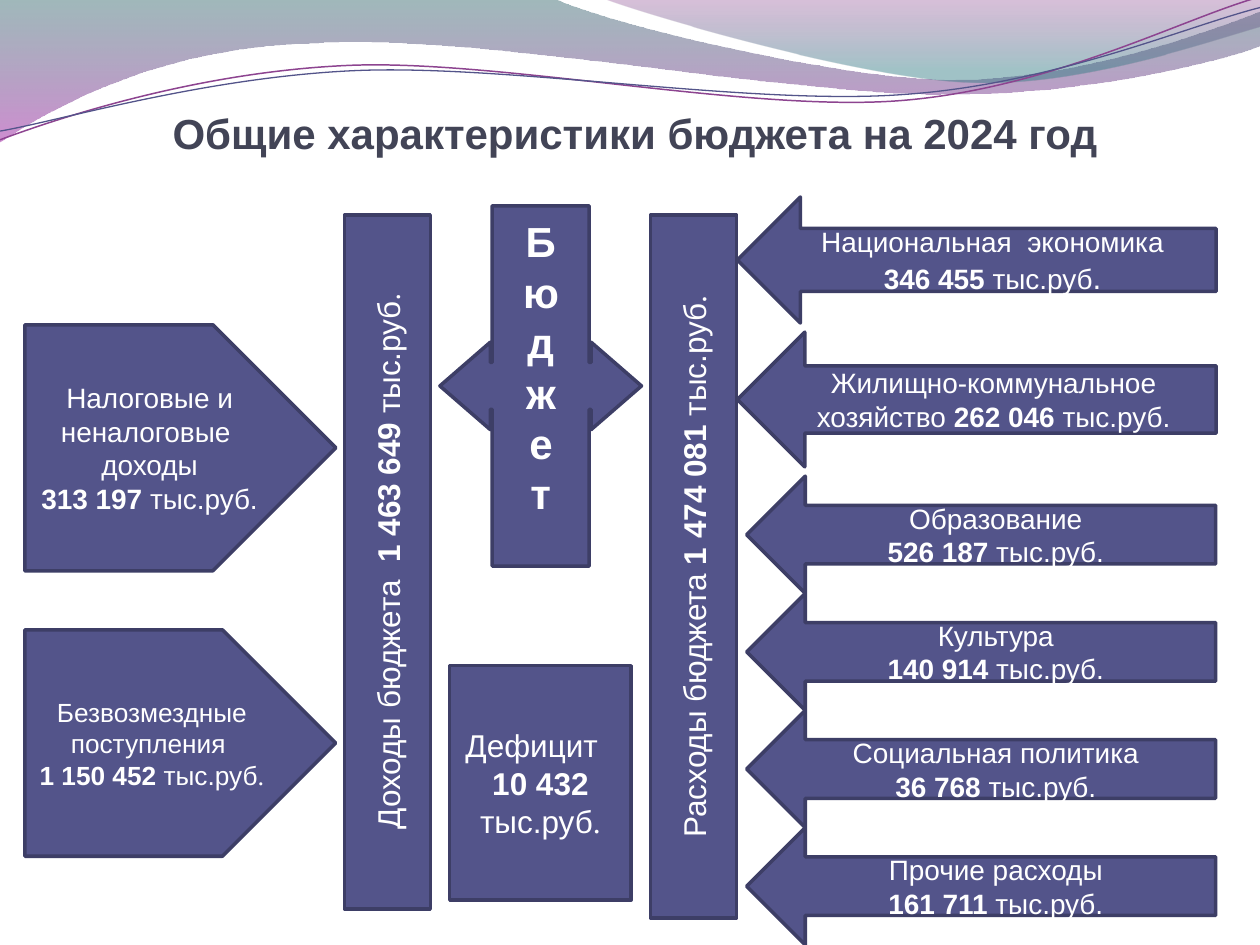
from pptx import Presentation
from pptx.dml.color import RGBColor
from pptx.enum.shapes import MSO_SHAPE
from pptx.enum.text import MSO_ANCHOR, MSO_AUTO_SIZE, PP_ALIGN
from pptx.oxml.ns import qn
from pptx.util import Pt
from lxml.etree import SubElement

INDIGO = RGBColor(0x53, 0x54, 0x8A)
DARK_INDIGO = RGBColor(0x3D, 0x3E, 0x66)
SLATE = RGBColor(0x42, 0x44, 0x56)
WHITE = RGBColor(0xFF, 0xFF, 0xFF)
TEAL = RGBColor(0x2D, 0x63, 0x68)
LIGHT_TEAL = RGBColor(0x2F, 0x7B, 0x82)
PURPLE = RGBColor(0xA5, 0x30, 0xA9)
DARK_PURPLE = RGBColor(0x7F, 0x2F, 0x82)
PLUM = RGBColor(0x8D, 0x44, 0x90)

TIMES = {"font": "Times New Roman"}
CAMBRIA = {"font": "Cambria"}
BOLD = {"bold": True}

TITLE = "Общие характеристики бюджета на 2024 год"

# Each wave: start point, then line ends (one point) or Bezier pieces (three points)
BANDS = [
    ([(0, 0), [(316.8, -0.7)],
      [(342.7, 12.2), (478.1, 45.4), (545.8, 45.4)],
      [(614.2, 45.4), (689.8, 18.7), (720, 6.5)],
      [(720.7, 25.9)],
      [(707.8, 31.7), (626.4, 54.7), (537.1, 54)],
      [(447.8, 54), (275, 20.2), (185, 24.5)],
      [(92.9, 25.9), (33.1, 59.8), (-0.7, 81.4)],
      [(0, 0)]],
     [(0, TEAL, 45), (1, PURPLE, 55)]),
    ([(344.9, -0.7),
      [(366.5, 7.9), (491, 44.6), (553.7, 46.8)],
      [(616.3, 49.7), (691.9, 23), (720, 15.1)],
      [(720, 0)], [(344.9, -0.7)]],
     [(0, DARK_PURPLE, 30), (0.8, LIGHT_TEAL, 45)]),
]
STRANDS = [
    ([(0, 79.9),
      [(34.6, 67), (113.8, 41), (199.4, 37.4)],
      [(284.4, 33.8), (427, 64.1), (513.4, 57.6)],
      [(599.8, 51.1), (675.4, 10.8), (718.6, -1.4)]], PLUM, 0.85),
    ([(0, 74.9),
      [(33.8, 69.1), (118.1, 43.9), (203.8, 40.3)],
      [(290.2, 36.7), (429.8, 60.5), (516.2, 54)],
      [(601.9, 48.2), (677.5, 15.1), (720, 4.3)]], INDIGO, 0.75),
]


def amount(number, dot=None):
    """Runs for a bold number and its unit; dot restyles the final full stop."""
    unit = [("тыс.руб", {}), (".", dot)] if dot else [("тыс.руб.", {})]
    return [(number + " ", BOLD)] + unit


# preset, (left, top, width, height), text size, text direction, paragraphs of runs
BLOCKS = [
    (MSO_SHAPE.LEFT_RIGHT_ARROW_CALLOUT, (251.4, 117.6, 115.2, 205.9), 24, "wordArtVert",
     [[("Бюджет", BOLD), (" ", {"font": "Times New Roman", "size": 18})]]),
    (MSO_SHAPE.RECTANGLE, (196.9, 122.8, 49, 396.7), 18, "vert270",
     [[("Доходы бюджета ", {}), (" 1 463 649 ", BOLD), ("тыс.руб", {}), (".", CAMBRIA)]]),
    (MSO_SHAPE.RECTANGLE, (371.8, 122.8, 49, 401.8), 18, "vert270",
     [[("Расходы бюджета ", {})] + amount("1 474 081", TIMES)]),
    (MSO_SHAPE.PENTAGON, (14.2, 185.6, 177.8, 140.6), 16, "horz",
     [[("Налоговые и неналоговые  доходы", {})], amount("313 197")]),
    (MSO_SHAPE.PENTAGON, (14.2, 359.9, 177.6, 129.4), 15, "horz",
     [[("Безвозмездные поступления ", {})], amount("1 150 452", TIMES)]),
    (MSO_SHAPE.LEFT_ARROW, (421.4, 112.6, 273.6, 72), 16, "horz",
     [[("Национальная  экономика", {})], amount("346 455", {"size": 18})]),
    (MSO_SHAPE.LEFT_ARROW, (421.4, 189.8, 273.6, 77), 16, "horz",
     [[("Жилищно-коммунальное хозяйство ", {})] + amount("262 046")]),
]
CALLOUT_ADJUSTMENTS = (0.233, 0.217, 0.25, 0.481)

EXPENSES = [
    ("Образование", "526 187"),
    ("Культура", "140 914"),
    ("Социальная политика", "36 768"),
    ("Прочие расходы", "161 711"),
]
EXPENSE_LEFT, EXPENSE_TOP, EXPENSE_WIDTH, EXPENSE_HEIGHT = 426.7, 272.1, 268, 66.95

DEFICIT = (MSO_SHAPE.RECTANGLE, (257, 380.4, 103.7, 133.9), 18, "horz",
           [[("Дефицит   ", {})] + amount("10 432", TIMES)])


def add_wave(s, outline, close):
    start, *pieces = outline
    tenths = [(round(x * 10), round(y * 10)) for piece in pieces for x, y in piece]
    builder = s.shapes.build_freeform(*(v * 10 for v in start), scale=Pt(0.1))
    builder.add_line_segments(tenths, close=close)
    sp = builder.convert_to_shape()
    sp.shadow.inherit = False
    bend_lines(sp, pieces)
    return sp


def bend_lines(sp, pieces):
    """Merge each three lines that stand for a Bezier piece into one curve."""
    lines = iter(list(sp.element.spPr.iter(qn("a:lnTo"))))
    for piece in pieces:
        first, *others = [next(lines) for _ in piece]
        if others:
            first.tag = qn("a:cubicBezTo")
            for line in others:
                first.append(line[0])
                line.getparent().remove(line)


def fill_gradient(sp, stops):
    """Top-to-bottom gradient; each stop is position, colour, opacity in percent."""
    sp.fill.gradient()
    sp.fill.gradient_angle = 270
    for stop, (position, color, _) in zip(sp.fill.gradient_stops, stops):
        stop.position = position
        stop.color.rgb = color
    colors = sp.element.spPr.iter(qn("a:srgbClr"))
    for clr, (_, _, opacity) in zip(list(colors), stops):
        SubElement(clr, qn("a:alpha")).set("val", str(opacity * 1000))


def add_run(p, text, size, color, font="Arial", bold=False):
    r = p.add_run()
    r.text = text
    r.font.name = font
    r.font.size = Pt(size)
    r.font.bold = bold
    r.font.color.rgb = color


def add_block(s, preset, box, size, direction, paragraphs):
    sp = s.shapes.add_shape(preset, *map(Pt, box))
    sp.shadow.inherit = False
    sp.fill.solid()
    sp.fill.fore_color.rgb = INDIGO
    sp.line.color.rgb = DARK_INDIGO
    sp.line.width = Pt(2)
    tf = sp.text_frame
    tf.word_wrap = True
    tf.vertical_anchor = MSO_ANCHOR.MIDDLE
    sp.element.txBody.bodyPr.set("vert", direction)
    for i, runs in enumerate(paragraphs):
        p = tf.add_paragraph() if i else tf.paragraphs[0]
        p.alignment = PP_ALIGN.CENTER
        for text, style in runs:
            add_run(p, text, **{"size": size, "color": WHITE, **style})
    return sp


def add_title(s):
    title = s.shapes.title
    title.left, title.top, title.width, title.height = map(Pt, (36, 44.6, 653.8, 45.4))
    tf = title.text_frame
    tf.auto_size = MSO_AUTO_SIZE.NONE
    tf.word_wrap = True
    tf.vertical_anchor = MSO_ANCHOR.BOTTOM
    tf.margin_left = tf.margin_right = tf.margin_bottom = 0
    tf.margin_top = Pt(3.6)
    p = tf.paragraphs[0]
    p.alignment = PP_ALIGN.CENTER
    add_run(p, TITLE, 24, SLATE, bold=True)
    title.element.getparent().append(title.element)  # in front of the waves


def main():
    prs = Presentation()
    prs.slide_width, prs.slide_height = Pt(720), Pt(540)
    s = prs.slides.add_slide(prs.slide_layouts[5])

    for outline, stops in BANDS:
        sp = add_wave(s, outline, close=True)
        fill_gradient(sp, stops)
        sp.line.fill.background()
    for outline, color, width in STRANDS:
        sp = add_wave(s, outline, close=False)
        sp.fill.background()
        sp.line.color.rgb = color
        sp.line.width = Pt(width)

    add_title(s)
    for block in BLOCKS:
        sp = add_block(s, *block)
        if block[0] == MSO_SHAPE.LEFT_RIGHT_ARROW_CALLOUT:
            for i, value in enumerate(CALLOUT_ADJUSTMENTS):
                sp.adjustments[i] = value
    for row, (name, number) in enumerate(EXPENSES):
        box = (EXPENSE_LEFT, EXPENSE_TOP + row * EXPENSE_HEIGHT, EXPENSE_WIDTH, EXPENSE_HEIGHT)
        add_block(s, MSO_SHAPE.LEFT_ARROW, box, 16, "horz", [[(name, {})], amount(number)])
    add_block(s, *DEFICIT)

    prs.save("out.pptx")


if __name__ == "__main__":
    main()
